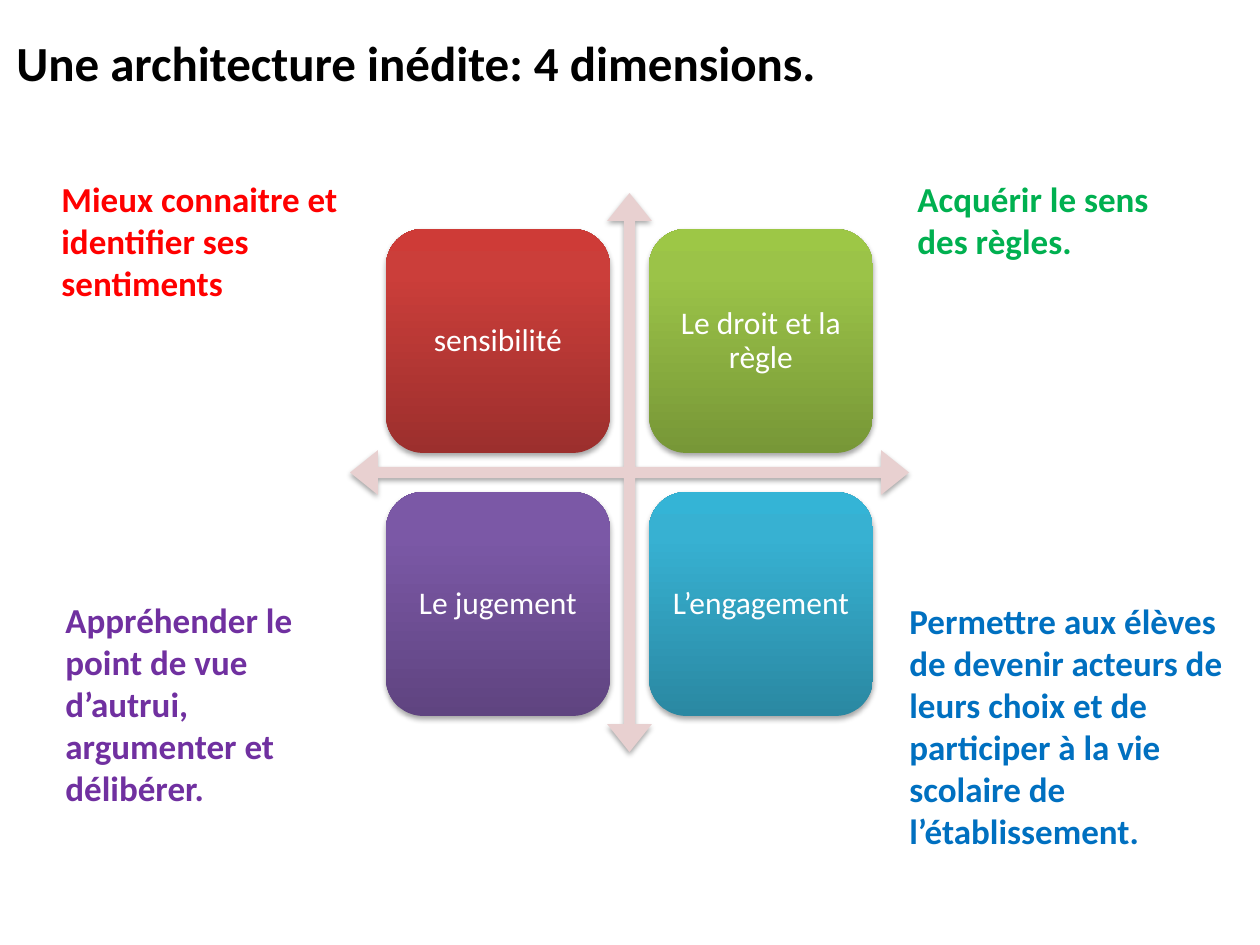
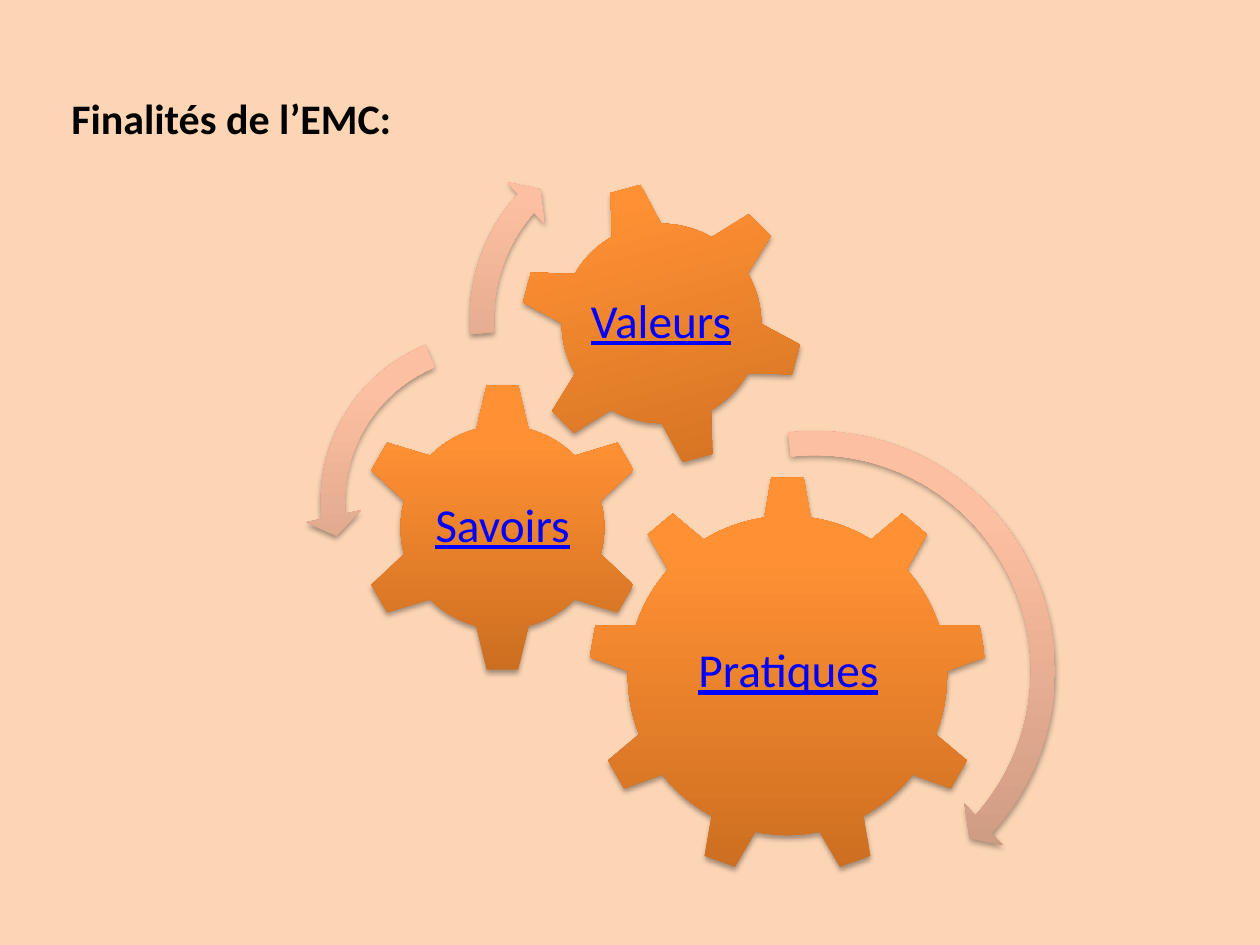
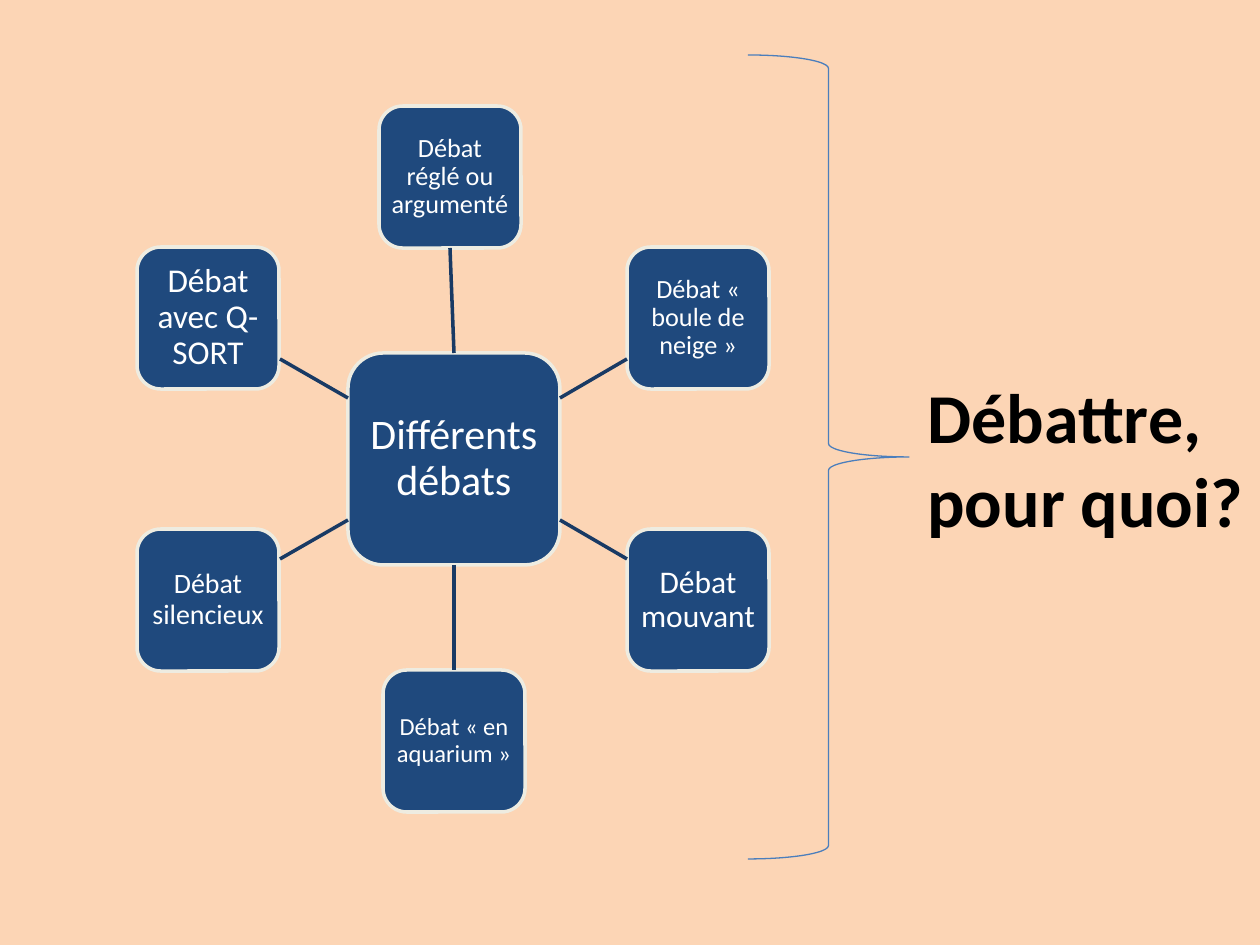
from lxml import etree
from pptx import Presentation
from pptx.dml.color import RGBColor
from pptx.enum.shapes import MSO_CONNECTOR, MSO_SHAPE
from pptx.enum.text import MSO_ANCHOR, PP_ALIGN
from pptx.oxml.ns import qn
from pptx.util import Pt

PX = 914400 / 126
ROUND = MSO_SHAPE.ROUNDED_RECTANGLE
QUAD = MSO_SHAPE.QUAD_ARROW
GEAR6, GEAR9 = MSO_SHAPE.GEAR_6, MSO_SHAPE.GEAR_9
TURN, BACK = MSO_SHAPE.CIRCULAR_ARROW, MSO_SHAPE.LEFT_CIRCULAR_ARROW
BRACE = MSO_SHAPE.RIGHT_BRACE
LINE = MSO_CONNECTOR.STRAIGHT
MID, TOP = MSO_ANCHOR.MIDDLE, MSO_ANCHOR.TOP
CENTER, LEFT = PP_ALIGN.CENTER, PP_ALIGN.LEFT


class Theme:
    font = "Calibri"
    black, white, peach = "000000", "FFFFFF", "FCD5B5"
    cross, link = "E8D0D0", "0000FF"
    navy, spoke, edge, brace = "1F497D", "193A64", "EEECE1", "4B7EBC"
    # Gradients run from bottom to top, with stops at 0, 80 and 100 %
    red = ("9C2F2D", "CB3E3A", "CE3B37")
    green = ("779737", "9BC348", "9DC746")
    violet = ("5F4480", "7B58A6", "7C57A8")
    blue = ("2A88A2", "37B1D2", "34B4D6")
    orange = ("CC6E20", "FF9034", "FF9136")
    salmon = ("C3937C", "FDBFA1", "FFBFA1")
    title, head, note, cell, gear, hub, big = 28, 24, 20, 18, 27, 24, 40


def draw(page, kind, box, fill, shade=True):
    """Add a preset shape with a plain or graded fill and a soft shadow."""
    shape = page.shapes.add_shape(kind, *[int(v * PX) for v in box])
    shape.line.fill.background()
    shape.shadow.inherit = False
    if isinstance(fill, tuple):
        shape.fill.gradient()
        shape.fill.gradient_angle = 90
        stops = shape._element.spPr.find(".//" + qn("a:gsLst"))
        stops.clear()
        for pos, tint in zip((0, 80000, 100000), fill):
            stop = etree.SubElement(stops, qn("a:gs"), pos=str(pos))
            etree.SubElement(stop, qn("a:srgbClr"), val=tint)
    else:
        shape.fill.solid()
        shape.fill.fore_color.rgb = RGBColor.from_string(fill)
    if shade:
        glow = etree.SubElement(
            shape._element.spPr.find(qn("a:effectLst")), qn("a:outerShdw"),
            blurRad="40000", dist="23000", dir="5400000", rotWithShape="0")
        tint = etree.SubElement(glow, qn("a:srgbClr"), val=Theme.black)
        etree.SubElement(tint, qn("a:alpha"), val="35000")
    return shape


def write(page, place, text, size, color, pad=None):
    """Fill a shape, or a new text box; a pad gives a centred label."""
    if isinstance(place, tuple):
        place = page.shapes.add_textbox(*[int(v * PX) for v in place])
    frame = place.text_frame
    frame.word_wrap = True
    frame.text = text
    frame.vertical_anchor = TOP if pad is None else MID
    if pad is not None:
        frame.margin_left = frame.margin_right = int(pad * PX)
        frame.margin_top = frame.margin_bottom = int(pad * PX)
    for para in frame.paragraphs:
        para.alignment = LEFT if pad is None else CENTER
        para.line_spacing = 1.0 if pad is None else 0.9
        para.font.name = Theme.font
        para.font.size = Pt(size)
        para.font.bold = pad is None
        para.font.color.rgb = RGBColor.from_string(color)
    return frame


deck = Presentation()
deck.slide_width, deck.slide_height = int(1260 * PX), int(945 * PX)
pages = []
for tint in (Theme.white, Theme.peach, Theme.peach):
    page = deck.slides.add_slide(deck.slide_layouts[6])
    page.background.fill.solid()
    page.background.fill.fore_color.rgb = RGBColor.from_string(tint)
    pages.append(page)
dims, aims, talks = pages

# Slide 1: four dimensions around a cross
write(dims, (4, 26, 1004, 72), "Une architecture inédite: 4 dimensions.",
      Theme.title, Theme.black)
cross = draw(dims, QUAD, (350, 193, 559, 559), Theme.cross)
for i, value in enumerate((0.02, 0.04, 0.05)):
    cross.adjustments[i] = value

cells = [
    ("sensibilité", Theme.red),
    ("Le droit et la règle", Theme.green),
    ("Le jugement", Theme.violet),
    ("L’engagement", Theme.blue),
]
for i, (text, fill) in enumerate(cells):
    row, col = divmod(i, 2)
    cell = draw(dims, ROUND, (386 + 263 * col, 229 + 263 * row, 224, 224), fill)
    write(dims, cell, text, Theme.cell, Theme.white, 9)

notes = [
    ((49, 171, 306, 140), "FF0000", "Mieux connaitre et identifier ses sentiments"),
    ((905, 171, 306, 97), "00B050", "Acquérir le sens des règles."),
    ((53, 592, 306, 224), "7030A0",
     "Appréhender le point de vue d’autrui, argumenter et délibérer."),
    ((897, 593, 363, 267), "0070C0",
     "Permettre aux élèves de devenir acteurs de leurs choix et de participer "
     "à la vie scolaire de l’établissement."),
]
for box, color, text in notes:
    write(dims, box, text, Theme.note, color)

# Slide 2: three gears with their turning arrows
gears = [
    ("Pratiques", GEAR9, (588, 476, 399, 399), 0, (669, 570, 239, 205)),
    ("Savoirs", GEAR6, (357, 382, 291, 291), 0, (430, 455, 145, 144)),
    ("Valeurs", GEAR6, (519, 181, 285, 285), 345, (581, 243, 160, 160)),
]
for text, kind, box, angle, label in gears:
    draw(aims, kind, box, Theme.orange).rotation = angle
    frame = write(aims, label, text, Theme.gear, Theme.link, 4)
    frame.paragraphs[0].font.underline = True

turns = [
    (TURN, (559, 415, 512, 512), (0.047, 2.99, 25.37, 158.17, 0.055)),
    (BACK, (305, 316, 372, 372), (0.065, 4.3, 104.891, 148.378, 0.075)),
    (TURN, (454, 118, 401, 401), (0.06, 3.941, 133.138, 105.082, 0.07)),
]
for kind, box, values in turns:
    arrow = draw(aims, kind, box, Theme.salmon)
    for i, value in enumerate(values):
        arrow.adjustments[i] = value
write(aims, (59, 86, 566, 63), "Finalités de l’EMC:", Theme.head, Theme.black)

# Slide 3: kinds of debate around a hub; a join names the sides of hub and node
hub = draw(talks, ROUND, (348, 353, 212, 212), Theme.navy, False)
write(talks, hub, "Différents débats", Theme.hub, Theme.white, 9)
nodes = [
    ("Débat réglé ou argumenté", 15, 379, 106, (0, 2), (454, 353, 450, 248)),
    ("Débat avec Q-SORT", 19, 137, 247, None, (348, 398, 280, 359)),
    ("Débat silencieux", 16, 137, 529, None, (348, 520, 280, 559)),
    ("Débat « en aquarium »", 14, 383, 670, (2, 0), (454, 565, 454, 670)),
    ("Débat mouvant", 18, 627, 529, None, (560, 520, 627, 559)),
    ("Débat « boule de neige »", 15, 627, 247, None, (560, 398, 627, 359)),
]
rims = [hub]
for text, size, left, top, join, ends in nodes:
    node = draw(talks, ROUND, (left, top, 142, 142), Theme.navy, False)
    write(talks, node, text, size, Theme.white, 4)
    rims.append(node)
    spoke = talks.shapes.add_connector(LINE, *[int(v * PX) for v in ends])
    spoke.line.color.rgb = RGBColor.from_string(Theme.spoke)
    spoke.line.width = Pt(2)
    etree.SubElement(spoke._element.spPr, qn("a:effectLst"))
    if join:
        spoke.begin_connect(hub, join[0])
        spoke.end_connect(node, join[1])
for rim in rims:
    rim.line.color.rgb = RGBColor.from_string(Theme.edge)
    rim.line.width = Pt(2)

# Closing question beside the brace
write(talks, (915, 367, 345, 183), "Débattre,\npour quoi?", Theme.big, Theme.black)
brace = draw(talks, BRACE, (748, 55, 161, 804), Theme.peach, False)
brace.fill.background()
brace.line.color.rgb = RGBColor.from_string(Theme.brace)
brace.line.width = Pt(0.75)

deck.save("out.pptx")
